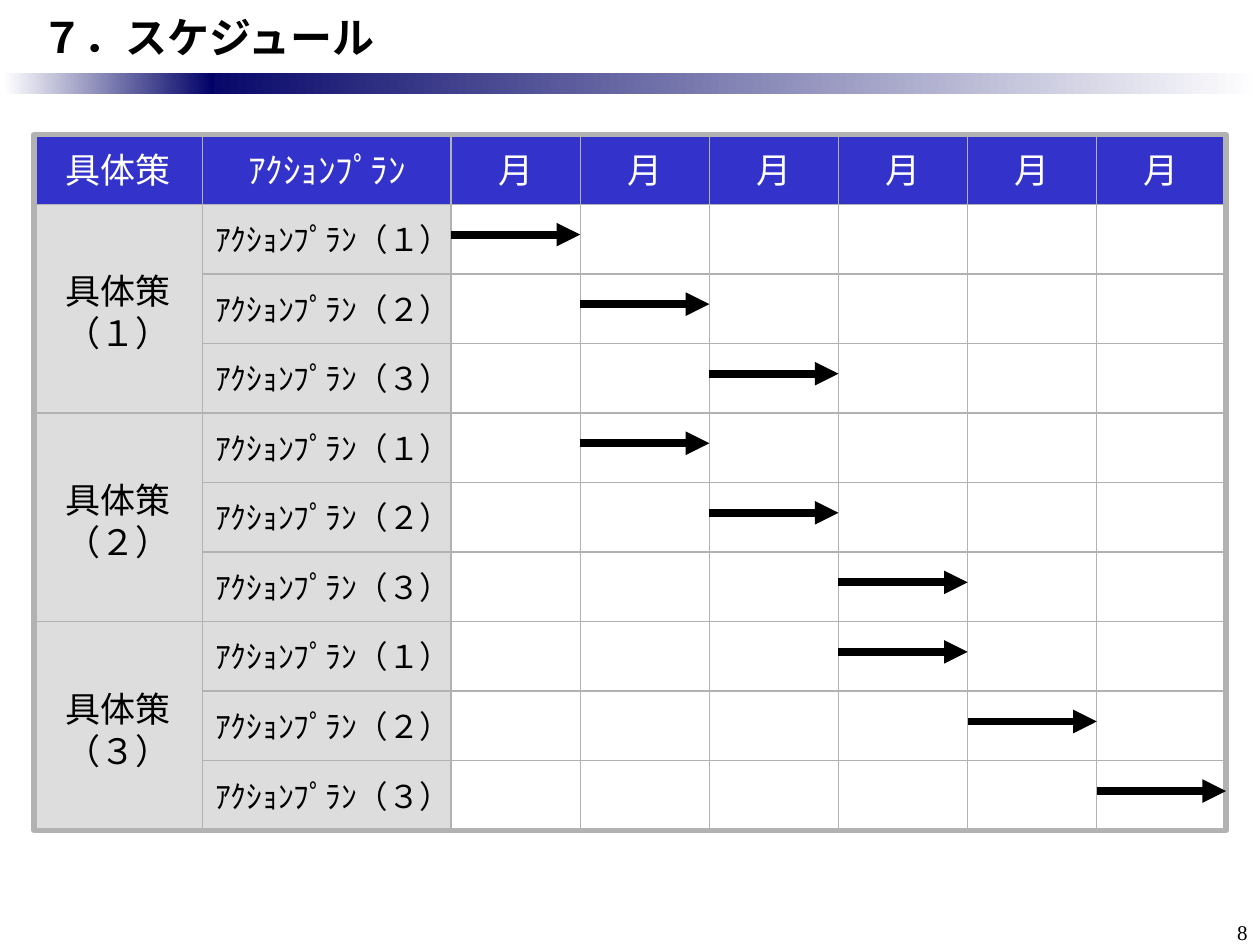
from dataclasses import dataclass

from lxml.etree import SubElement
from pptx import Presentation
from pptx.dml.color import RGBColor
from pptx.enum.shapes import MSO_CONNECTOR, MSO_SHAPE
from pptx.enum.text import MSO_ANCHOR, PP_ALIGN
from pptx.oxml.ns import qn
from pptx.util import Inches, Pt


@dataclass(frozen=True)
class Theme:
    navy: str = "000066"
    blue: str = "3333CC"
    gray: str = "DDDDDD"
    rule: str = "B2B2B2"
    white: str = "FFFFFF"
    black: str = "000000"
    sans: str = "Noto Sans CJK JP"
    serif: str = "Times New Roman"
    title: int = 24
    head: int = 20
    plan: int = 18
    page: int = 12
    thin: float = 0.75
    thick: float = 3
    arrow: float = 4.5


THEME = Theme()
MONTHS = 6
# Each measure with the start month of its three action plans
STARTS = {"具体策（１）": (0, 1, 2), "具体策（２）": (1, 2, 3), "具体策（３）": (3, 4, 5)}
DIGITS = "１２３"


def color(code):
    return RGBColor.from_string(code)


def style(frame, size, code, font=THEME.sans, bold=False, align=PP_ALIGN.LEFT):
    for par in frame.paragraphs:
        par.alignment = align
        for run in par.runs:
            run.font.size = Pt(size)
            run.font.bold = bold
            run.font.name = font
            run.font.color.rgb = color(code)
            east = SubElement(run.font._element, qn("a:ea"))
            east.set("typeface", font)


def add_label(slide, box, text, size, **look):
    frame = slide.shapes.add_textbox(*map(Inches, box)).text_frame
    frame.word_wrap = True
    frame.text = text
    style(frame, size, THEME.black, **look)
    return frame


def add_rect(slide, box):
    rect = slide.shapes.add_shape(MSO_SHAPE.RECTANGLE, *map(Inches, box))
    rect.shadow.inherit = False
    return rect


def add_band(slide, box, first, last):
    band = add_rect(slide, box)
    band.line.fill.background()
    band.fill.gradient()
    band.fill.gradient_angle = 0
    for stop, code, place in zip(band.fill.gradient_stops, (first, last), (0, 1)):
        stop.color.rgb = color(code)
        stop.position = place


def add_header(slide, box):
    left, top, width, height = box
    add_band(slide, (left + 1.42, top + 0.58, width - 1.42, 0.17), THEME.navy, THEME.white)
    add_band(slide, (left + 0.03, top + 0.58, 1.67, 0.17), THEME.white, THEME.navy)
    frame = add_label(slide, box, "７．スケジュール", THEME.title, bold=True)
    frame.margin_left = Inches(0.33)
    frame.vertical_anchor = MSO_ANCHOR.MIDDLE


def add_cell(slide, box, shade, text="", size=THEME.head, code=THEME.black,
             align=PP_ALIGN.CENTER):
    cell = add_rect(slide, box)
    cell.fill.solid()
    cell.fill.fore_color.rgb = color(shade)
    cell.line.color.rgb = color(THEME.rule)
    cell.line.width = Pt(THEME.thin)
    frame = cell.text_frame
    frame.vertical_anchor = MSO_ANCHOR.MIDDLE
    frame.word_wrap = False
    if text:
        frame.text = text
        style(frame, size, code, align=align)
    return frame


def add_frame(slide, box):
    frame = add_rect(slide, box)
    frame.fill.background()
    frame.line.color.rgb = color(THEME.rule)
    frame.line.width = Pt(THEME.thick)


def add_arrow(slide, start, end, level):
    arrow = slide.shapes.add_connector(
        MSO_CONNECTOR.STRAIGHT, *map(Inches, (start, level, end, level)))
    arrow.line.width = Pt(THEME.arrow)
    arrow.line.color.rgb = color(THEME.black)
    SubElement(arrow.line._get_or_add_ln(), qn("a:tailEnd"), type="triangle")
    SubElement(arrow._element.spPr, qn("a:effectLst"))


def add_plan(slide, box):
    """Grid of measures, action plans and months, with one arrow a plan."""
    left, top, width, height = box
    pitch = height / 10
    month = (width - 1.34 - 1.97) / MONTHS
    lefts = [left, left + 1.34] + [left + 3.31 + month * n for n in range(MONTHS + 1)]

    def place(row, col, span=1):
        return lefts[col], top + row * pitch, lefts[col + 1] - lefts[col], span * pitch

    # Heading row
    for col, text in enumerate(["具体策", "ｱｸｼｮﾝﾌﾟﾗﾝ"] + ["月"] * MONTHS):
        add_cell(slide, place(0, col), THEME.blue, text, code=THEME.white)

    # Measures, each beside its action plans and their months
    for group, name in enumerate(STARTS):
        first = 1 + group * len(DIGITS)
        frame = add_cell(slide, place(first, 0, len(DIGITS)), THEME.gray, name)
        frame.word_wrap = True
        frame.margin_top = Inches(0.1)
        frame.paragraphs[0].line_spacing = Pt(24)
        for row, digit in enumerate(DIGITS, first):
            add_cell(slide, place(row, 1), THEME.gray, f"ｱｸｼｮﾝﾌﾟﾗﾝ（{digit}）",
                     THEME.plan, align=PP_ALIGN.LEFT)
            for n in range(MONTHS):
                add_cell(slide, place(row, n + 2), THEME.white)
    add_frame(slide, box)

    # Arrows over the months
    months = [n for starts in STARTS.values() for n in starts]
    for row, n in enumerate(months, 1):
        add_arrow(slide, lefts[n + 2], lefts[n + 3], top + row * pitch + 0.24)


def main():
    deck = Presentation()
    deck.slide_width, deck.slide_height = Inches(10), Inches(7.5)
    slide = deck.slides.add_slide(deck.slide_layouts[6])
    add_header(slide, (0, 0, 10, 0.58))
    add_plan(slide, (0.27, 1.07, 9.46, 5.52))
    # Page number
    add_label(slide, (9.42, 7.25, 0.58, 0.25), "8", THEME.page,
              font=THEME.serif, align=PP_ALIGN.RIGHT)
    deck.save("out.pptx")


if __name__ == "__main__":
    main()
